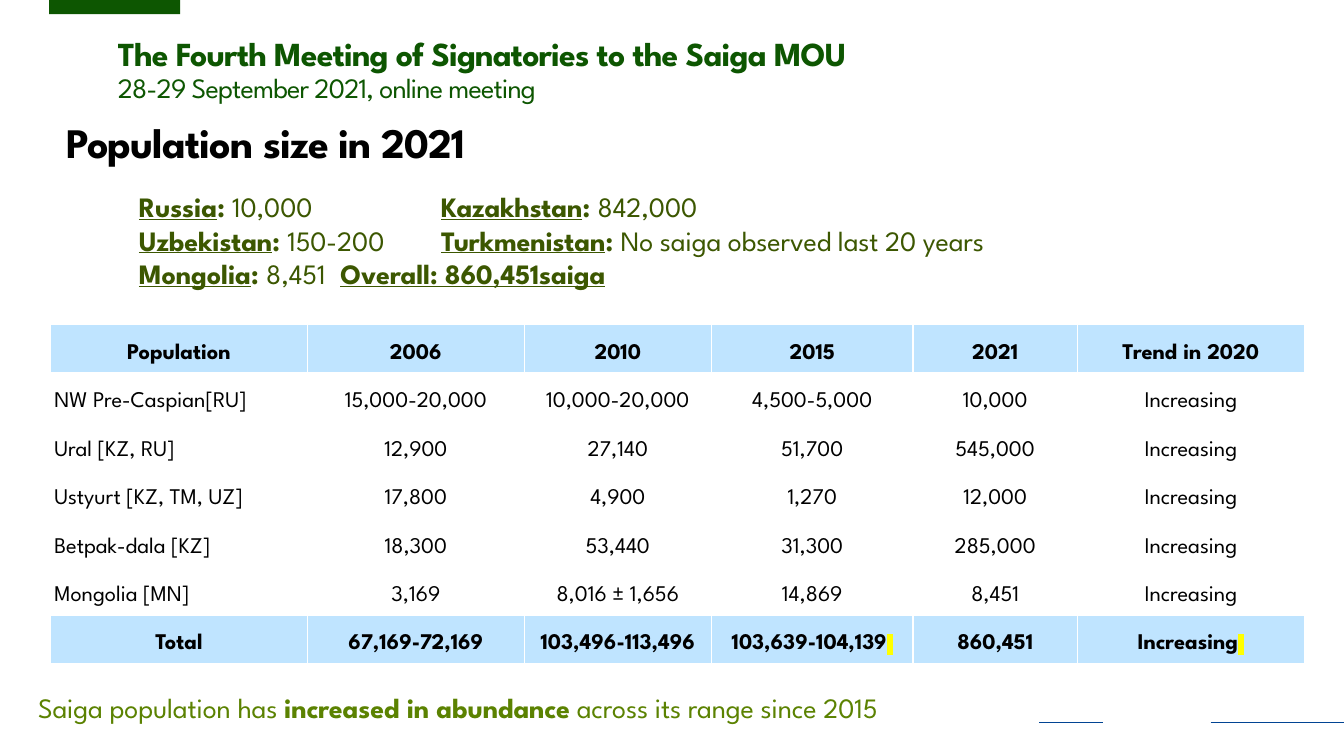
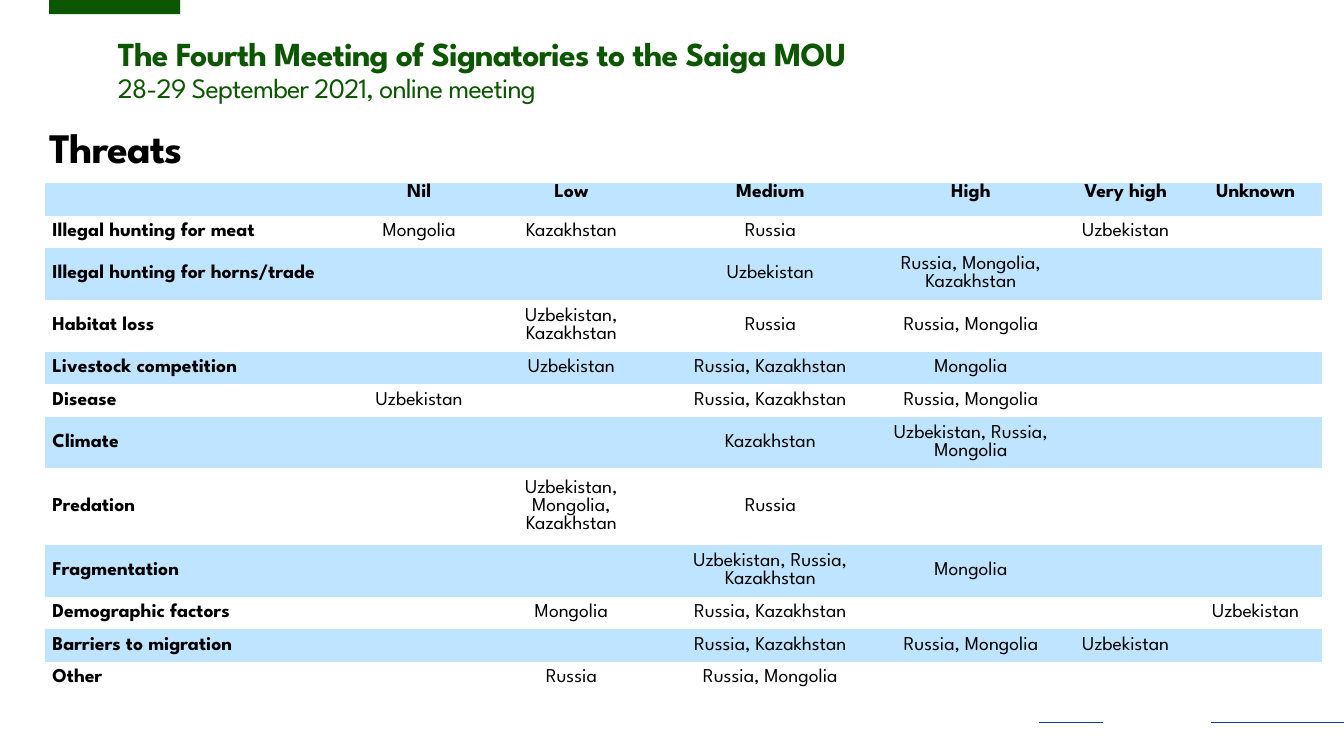
from collections.abc import Sequence
from dataclasses import dataclass

from lxml.etree import SubElement
from pptx import Presentation
from pptx.dml.color import RGBColor
from pptx.enum.shapes import MSO_CONNECTOR, MSO_SHAPE
from pptx.enum.text import MSO_ANCHOR, MSO_AUTO_SIZE, PP_ALIGN
from pptx.oxml.ns import qn
from pptx.oxml.xmlchemy import OxmlElement
from pptx.presentation import Presentation as Deck
from pptx.slide import Slide
from pptx.table import Table, _Cell
from pptx.text.text import TextFrame, _Paragraph
from pptx.util import Cm, Pt

FONT = "League Spartan"
COLORS = {
    "green": "0D5601",
    "olive": "3C5701",
    "lime": "5B8201",
    "black": "000000",
    "blue": "014493",
    "band": "BFE4FF",
    "white": "FFFFFF",
    "yellow": "FFFF00",
}
NO_GRID_STYLE = "{2D5ABB26-0587-4C30-8999-92F81FD0307C}"
BORDER_TAGS = ("a:lnL", "a:lnR", "a:lnT", "a:lnB")
HARD_SPACE = " "


@dataclass(frozen=True)
class Style:
    size: float
    color: str
    tracking: float = 0


@dataclass(frozen=True)
class Span:
    text: str
    bold: bool = False
    underline: bool = False
    highlight: bool = False


@dataclass(frozen=True)
class Box:
    left: float
    top: float
    width: float
    height: float

    def lengths(self) -> tuple[Cm, Cm, Cm, Cm]:
        return Cm(self.left), Cm(self.top), Cm(self.width), Cm(self.height)


@dataclass(frozen=True)
class Fact:
    label: str
    value: str


@dataclass(frozen=True)
class Grid:
    left: float
    top: float
    columns: tuple[float, ...]
    heights: tuple[float, ...]
    rows: tuple[tuple[str, ...], ...]


HEADING_STYLE = Style(24, "green", -0.6)
DATE_STYLE = Style(20, "green", -0.6)
TITLE_STYLE = Style(30, "black", -0.6)
FACT_STYLE = Style(20, "olive", -0.1)
SUMMARY_STYLE = Style(20, "lime", -0.1)
POPULATION_STYLE = Style(16, "black")
THREAT_STYLE = Style(14, "black")

FOOTER_TOP = 18.21
FOOTER_LINES = ((30.51, 33.87), (26.19, 27.79))

# Tab stops of each line, then the countries on it
FACT_LINES = (
    ((2.54, 10.16), (Fact("Russia", "10,000"), Fact("Kazakhstan", "842,000"))),
    ((2.54, 10.16), (Fact("Uzbekistan", "150-200"),
                     Fact("Turkmenistan", "No saiga observed last 20 years"))),
    ((2.54, 7.62), (Fact("Mongolia", "8,451"),)),
)

POPULATIONS = Grid(
    1.27, 8.18, (6.48, 5.46, 4.72, 5.08, 4.14, 5.72), (1.22,) * 7,
    (
        ("Population", "2006", "2010", "2015", "2021", "Trend in 2020"),
        ("NW Pre-Caspian[RU]", "15,000-20,000", "10,000-20,000", "4,500-5,000",
         "10,000", "Increasing"),
        ("Ural [KZ, RU]", "12,900", "27,140", "51,700", "545,000", "Increasing"),
        ("Ustyurt [KZ, TM, UZ]", "17,800", "4,900", "1,270", "12,000", "Increasing"),
        ("Betpak-dala [KZ]", "18,300", "53,440", "31,300", "285,000", "Increasing"),
        ("Mongolia [MN]", "3,169", "8,016 ± 1,656", "14,869", "8,451", "Increasing"),
        ("Total", "67,169-72,169", "103,496-113,496", "103,639-104,139",
         "860,451", "Increasing"),
    ),
)
HIGHLIGHTED_TOTALS = (3, 5)

LINE_COUNT_HEIGHTS = {1: 0.82, 2: 1.3, 3: 1.94}
THREAT_LINE_COUNTS = (1, 1, 2, 2, 1, 1, 2, 3, 2, 1, 1, 1)
THREATS = Grid(
    1.14, 4.62, (7.85, 3.15, 4.52, 5.51, 4.6, 3.2, 3.35),
    tuple(LINE_COUNT_HEIGHTS[count] for count in THREAT_LINE_COUNTS),
    (
        ("", "Nil", "Low", "Medium", "High", "Very high", "Unknown"),
        ("Illegal hunting for meat", "Mongolia", "Kazakhstan", "Russia", "",
         "Uzbekistan", ""),
        ("Illegal hunting for horns/trade", "", "", "Uzbekistan",
         "Russia, Mongolia, Kazakhstan", "", ""),
        ("Habitat loss", "", "Uzbekistan, Kazakhstan", "Russia",
         "Russia, Mongolia", "", ""),
        ("Livestock competition", "", "Uzbekistan", "Russia, Kazakhstan",
         "Mongolia", "", ""),
        ("Disease", "Uzbekistan", "", "Russia, Kazakhstan", "Russia, Mongolia", "", ""),
        ("Climate", "", "", "Kazakhstan", "Uzbekistan, Russia, Mongolia", "", ""),
        ("Predation", "", "Uzbekistan, Mongolia, Kazakhstan", "Russia", "", "", ""),
        ("Fragmentation", "", "", "Uzbekistan, Russia, Kazakhstan", "Mongolia", "", ""),
        ("Demographic factors", "", "Mongolia", "Russia, Kazakhstan", "", "",
         "Uzbekistan"),
        ("Barriers to migration", "", "", "Russia, Kazakhstan", "Russia, Mongolia",
         "Uzbekistan", ""),
        ("Other", "", "Russia", "Russia, Mongolia", "", "", ""),
    ),
)


def rgb(name: str) -> RGBColor:
    return RGBColor.from_string(COLORS[name])


def write_spans(paragraph: _Paragraph, spans: Sequence[Span], style: Style) -> None:
    for span in spans:
        run = paragraph.add_run()
        run.text = span.text
        run.font.size = Pt(style.size)
        run.font.bold = span.bold
        run.font.underline = span.underline
        run.font.color.rgb = rgb(style.color)
        run.font.name = FONT
        properties = run._r.get_or_add_rPr()
        if style.tracking:
            properties.set("spc", str(round(style.tracking * 100)))
        if span.highlight:
            highlight = OxmlElement("a:highlight")
            SubElement(highlight, qn("a:srgbClr")).set("val", COLORS["yellow"])
            properties.find(qn("a:latin")).addprevious(highlight)


def add_text_box(slide: Slide, box: Box) -> TextFrame:
    text_frame = slide.shapes.add_textbox(*box.lengths()).text_frame
    text_frame.word_wrap = True
    text_frame.auto_size = MSO_AUTO_SIZE.SHAPE_TO_FIT_TEXT
    return text_frame


def set_tab_stops(paragraph: _Paragraph, positions: Sequence[float]) -> None:
    tab_list = SubElement(paragraph._p.get_or_add_pPr(), qn("a:tabLst"))
    for position in positions:
        tab = SubElement(tab_list, qn("a:tab"))
        tab.set("pos", str(Cm(position)))
        tab.set("algn", "l")


def add_meeting_frame(slide: Slide) -> None:
    """Draw the corner bar, meeting heading and footer lines of every slide."""
    for start, end in FOOTER_LINES:
        line = slide.shapes.add_connector(
            MSO_CONNECTOR.STRAIGHT, Cm(start), Cm(FOOTER_TOP), Cm(end), Cm(FOOTER_TOP))
        line.line.color.rgb = rgb("blue")
        line.line.width = Pt(1)
        SubElement(line._element.spPr, qn("a:effectLst"))

    bar = slide.shapes.add_shape(MSO_SHAPE.RECTANGLE, *Box(1.24, 0, 3.3, 0.36).lengths())
    bar.shadow.inherit = False
    bar.fill.solid()
    bar.fill.fore_color.rgb = rgb("green")
    bar.line.fill.background()

    text_frame = add_text_box(slide, Box(2.72, 0.81, 31.04, 1.96))
    text_frame.vertical_anchor = MSO_ANCHOR.MIDDLE
    heading, date = text_frame.paragraphs[0], text_frame.add_paragraph()
    heading.line_spacing = date.line_spacing = 0.9
    write_spans(heading, [Span("The Fourth Meeting of Signatories to the Saiga MOU", True)],
                HEADING_STYLE)
    write_spans(date, [Span("28-29 September 2021, online meeting")], DATE_STYLE)


def add_meeting_slide(presentation: Deck, title: str, left: float, top: float) -> Slide:
    slide = presentation.slides.add_slide(presentation.slide_layouts[5])
    add_meeting_frame(slide)
    shape = slide.shapes.title
    shape.left, shape.top, shape.width, shape.height = Box(left, top, 31.04, 1.42).lengths()
    text_frame = shape.text_frame
    text_frame.word_wrap = True
    text_frame.auto_size = MSO_AUTO_SIZE.SHAPE_TO_FIT_TEXT
    text_frame.vertical_anchor = MSO_ANCHOR.MIDDLE
    paragraph = text_frame.paragraphs[0]
    paragraph.alignment = PP_ALIGN.LEFT
    paragraph.line_spacing = 0.9
    write_spans(paragraph, [Span(title, True)], TITLE_STYLE)
    return slide


def add_grid(slide: Slide, grid: Grid) -> Table:
    """Add an empty, unstyled table with the sizes of the grid."""
    box = Box(grid.left, grid.top, sum(grid.columns), sum(grid.heights))
    table = slide.shapes.add_table(
        len(grid.heights), len(grid.columns), *box.lengths()).table
    table.first_row = table.horz_banding = False
    table._tbl.tblPr.find(qn("a:tableStyleId")).text = NO_GRID_STYLE
    for column, width in zip(table.columns, grid.columns):
        column.width = Cm(width)
    for row, height in zip(table.rows, grid.heights):
        row.height = Cm(height)
    return table


def fill_cell(cell: _Cell, banded: bool, side_margin: float) -> _Paragraph:
    """Format the cell and return its paragraph, ready for text."""
    cell.margin_left = cell.margin_right = Cm(side_margin)
    cell.margin_top = cell.margin_bottom = 0
    cell.vertical_anchor = MSO_ANCHOR.MIDDLE
    if banded:
        cell.fill.solid()
        cell.fill.fore_color.rgb = rgb("band")
    else:
        cell.fill.background()
    return cell.text_frame.paragraphs[0]


def add_white_borders(cell: _Cell) -> None:
    properties = cell._tc.get_or_add_tcPr()
    for index, tag in enumerate(BORDER_TAGS):
        border = OxmlElement(tag)
        border.set("w", str(Pt(1)))
        fill = SubElement(border, qn("a:solidFill"))
        SubElement(fill, qn("a:srgbClr")).set("val", COLORS["white"])
        properties.insert(index, border)


def add_population_table(slide: Slide) -> None:
    table = add_grid(slide, POPULATIONS)
    last_row = len(POPULATIONS.rows) - 1
    for row, texts in enumerate(POPULATIONS.rows):
        banded = row in (0, last_row)
        for column, text in enumerate(texts):
            cell = table.cell(row, column)
            paragraph = fill_cell(cell, banded, 0.1)
            add_white_borders(cell)
            paragraph.line_spacing = 1.5
            centred = banded or column > 0
            paragraph.alignment = PP_ALIGN.CENTER if centred else PP_ALIGN.LEFT
            spans = [Span(text, banded)]
            if row == last_row and column in HIGHLIGHTED_TOTALS:
                spans.append(Span(HARD_SPACE, True, highlight=True))
            write_spans(paragraph, spans, POPULATION_STYLE)


def add_threat_table(slide: Slide) -> None:
    table = add_grid(slide, THREATS)
    for row, texts in enumerate(THREATS.rows):
        for column, text in enumerate(texts):
            cell = table.cell(row, column)
            paragraph = fill_cell(cell, row % 2 == 0, 0.18)
            if row == 0:
                cell.vertical_anchor = MSO_ANCHOR.TOP
            if text:
                paragraph.alignment = PP_ALIGN.CENTER if column else PP_ALIGN.LEFT
                paragraph.space_after = Pt(2)
                write_spans(paragraph, [Span(text, row == 0 or column == 0)], THREAT_STYLE)


def add_country_facts(slide: Slide) -> None:
    text_frame = add_text_box(slide, Box(0.71, 4.65, 31.72, 2.82))
    for index, (tab_stops, facts) in enumerate(FACT_LINES):
        paragraph = text_frame.add_paragraph() if index else text_frame.paragraphs[0]
        set_tab_stops(paragraph, tab_stops)
        paragraph.alignment = PP_ALIGN.JUSTIFY
        for fact in facts:
            write_spans(paragraph, [Span("\t"), Span(fact.label, True, True),
                                    Span(": ", True), Span(fact.value)], FACT_STYLE)
    write_spans(paragraph, [Span("\t"), Span("Overall: 860,451saiga", True, True)], FACT_STYLE)


def main() -> None:
    presentation = Presentation()
    presentation.slide_width, presentation.slide_height = Cm(33.87), Cm(19.05)

    population_slide = add_meeting_slide(presentation, "Population size in 2021", 1.42, 2.95)
    add_population_table(population_slide)
    add_country_facts(population_slide)
    summary = add_text_box(population_slide, Box(0.71, 17.27, 31.45, 1.12))
    write_spans(summary.paragraphs[0],
                [Span("Saiga population has "), Span("increased in abundance", True),
                 Span(" across its range since 2015")], SUMMARY_STYLE)

    threat_slide = add_meeting_slide(presentation, "Threats", 0.99, 3.07)
    add_threat_table(threat_slide)

    presentation.save("out.pptx")


if __name__ == "__main__":
    main()
